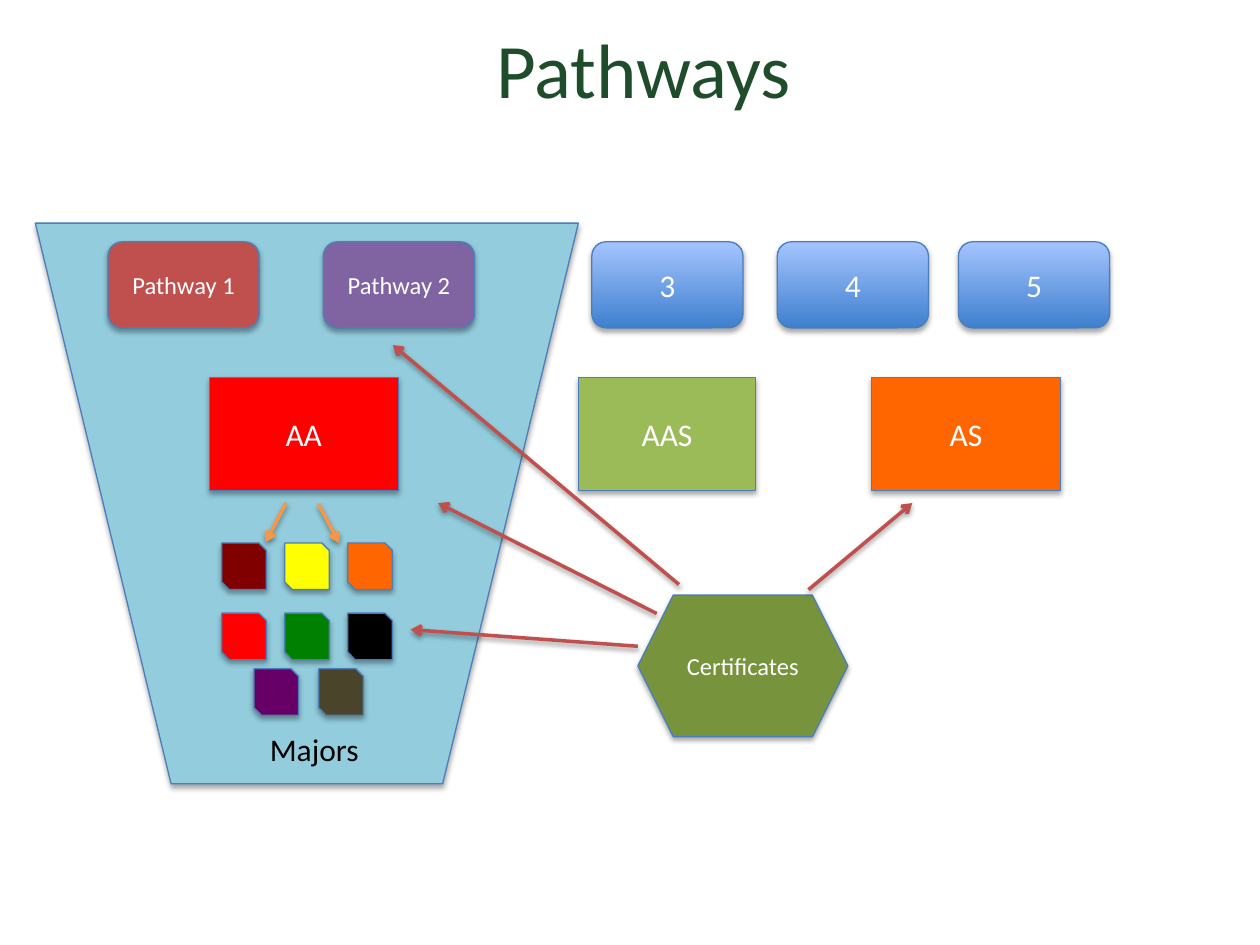
from dataclasses import dataclass

from lxml.etree import SubElement
from pptx import Presentation
from pptx.dml.color import RGBColor
from pptx.enum.shapes import MSO_CONNECTOR, MSO_SHAPE
from pptx.enum.text import MSO_ANCHOR, MSO_AUTO_SIZE, PP_ALIGN
from pptx.oxml.ns import qn
from pptx.util import Pt


@dataclass(frozen=True)
class Theme:
    font: str = "Calibri"
    title_size: float = 44
    label_size: float = 18
    small_size: float = 14
    title: str = "1F4C2B"
    text: str = "FFFFFF"
    dark_text: str = "000000"
    outline: str = "4B7EBC"
    funnel: str = "93CDDD"
    blue_bottom: str = "3F80CE"
    blue_top: str = "A4C4FF"
    pathway_1: str = "C0504D"
    pathway_2: str = "8064A2"
    red: str = "FF0000"
    orange: str = "FF6600"
    green: str = "9BBB59"
    certificate: str = "77933C"
    major_arrow: str = "F79646"
    certificate_arrow: str = "C0504D"


THEME = Theme()


@dataclass(frozen=True)
class Box:
    kind: MSO_SHAPE
    left: float
    top: float
    width: float
    height: float
    fill: str = ""  # empty means the blue gradient
    label: str = ""
    size: float = THEME.label_size
    rotation: float = 0


@dataclass(frozen=True)
class Arrow:
    x1: float
    y1: float
    x2: float
    y2: float
    color: str


def rgb(value: str) -> RGBColor:
    return RGBColor.from_string(value)


def write(tf, text: str, size: float, color: str) -> None:
    tf.text = text
    p = tf.paragraphs[0]
    p.alignment = PP_ALIGN.CENTER
    p.font.name = THEME.font
    p.font.size = Pt(size)
    p.font.color.rgb = rgb(color)


def add_shadow(sp, dist: float, opacity: int) -> None:
    effects = SubElement(sp.element.spPr, qn("a:effectLst"))
    outer = SubElement(effects, qn("a:outerShdw"), blurRad=str(Pt(3.1)),
                       dist=str(Pt(dist)), dir="5400000", rotWithShape="0")
    color = SubElement(outer, qn("a:srgbClr"), val="000000")
    SubElement(color, qn("a:alpha"), val=str(opacity * 1000))


def add_box(shapes, box: Box) -> None:
    sp = shapes.add_shape(box.kind, Pt(box.left), Pt(box.top),
                          Pt(box.width), Pt(box.height))
    sp.rotation = box.rotation
    if box.fill:
        sp.fill.solid()
        sp.fill.fore_color.rgb = rgb(box.fill)
    else:
        sp.fill.gradient()
        sp.fill.gradient_angle = 90
        colors = (THEME.blue_bottom, THEME.blue_top)
        for stop, color in zip(sp.fill.gradient_stops, colors):
            stop.color.rgb = rgb(color)
    sp.line.color.rgb = rgb(THEME.outline)
    sp.line.width = Pt(0.75)
    add_shadow(sp, 1.8, 35)
    if box.label:
        sp.text_frame.vertical_anchor = MSO_ANCHOR.MIDDLE
        write(sp.text_frame, box.label, box.size, THEME.text)


def add_arrow(shapes, arrow: Arrow) -> None:
    line = shapes.add_connector(MSO_CONNECTOR.STRAIGHT, Pt(arrow.x1), Pt(arrow.y1),
                                Pt(arrow.x2), Pt(arrow.y2))
    line.line.color.rgb = rgb(arrow.color)
    line.line.width = Pt(2)
    SubElement(line.element.spPr.find(qn("a:ln")), qn("a:tailEnd"), type="arrow")
    add_shadow(line, 1.6, 38)


FUNNEL = Box(MSO_SHAPE.TRAPEZOID, 20.2, 127.5, 310.3, 320.4, THEME.funnel, rotation=180)

# left, width, fill, label
DEGREES = [
    Box(MSO_SHAPE.RECTANGLE, left, 215.9, width, 64.6, fill, label)
    for left, width, fill, label in (
        (330.4, 101.5, THEME.green, "AAS"),
        (119.6, 108, THEME.red, "AA"),
        (498, 108, THEME.orange, "AS"),
    )
]

# left, fill, label, size
PATHWAYS = [
    Box(MSO_SHAPE.ROUNDED_RECTANGLE, left, 138.2, 86.4, 49.2, fill, label, size)
    for left, fill, label, size in (
        (61.7, THEME.pathway_1, "Pathway 1", THEME.small_size),
        (184.8, THEME.pathway_2, "Pathway 2", THEME.small_size),
        (338.2, "", "3", THEME.label_size),
        (444.2, "", "4", THEME.label_size),
        (547.7, "", "5", THEME.label_size),
    )
]

# left, top, step, fills of one row of majors
MAJORS = [
    Box(MSO_SHAPE.SNIP_2_DIAG_RECTANGLE, left + i * step, top, 25.4, 26.6, fill)
    for left, top, step, fills in (
        (126.8, 310.3, 36, ("800000", "FFFF00", THEME.orange)),
        (126.8, 350.4, 36, (THEME.red, "008000", "000000")),
        (145.2, 382.2, 37, ("660066", "4A452A")),
    )
    for i, fill in enumerate(fills)
]

CERTIFICATES = Box(MSO_SHAPE.HEXAGON, 364.5, 340.1, 120, 80.9, THEME.certificate,
                   "Certificates", THEME.small_size)

ARROWS = [
    Arrow(163.4, 287.5, 151.8, 309.8, THEME.major_arrow),
    Arrow(182, 288, 193.8, 310.3, THEME.major_arrow),
    Arrow(364.5, 369.3, 234.7, 359.8, THEME.certificate_arrow),
    Arrow(462, 337, 521.3, 287.5, THEME.certificate_arrow),
    Arrow(388, 334, 224.5, 197.2, THEME.certificate_arrow),
    Arrow(375.3, 350.6, 250.4, 287.5, THEME.certificate_arrow),
]


def main() -> None:
    prs = Presentation()
    prs.slide_width, prs.slide_height = Pt(720), Pt(540)
    slide = prs.slides.add_slide(prs.slide_layouts[0])
    shapes = slide.shapes

    # Title; the subtitle is not used
    subtitle = slide.placeholders[1].element
    subtitle.getparent().remove(subtitle)
    title = shapes.title
    title.left, title.top, title.width, title.height = Pt(219), Pt(8), Pt(297.5), Pt(61)
    title.text_frame.vertical_anchor = MSO_ANCHOR.MIDDLE
    write(title.text_frame, "Pathways", THEME.title_size, THEME.title)

    # Funnel, pathways, degrees, majors and certificates
    for box in (FUNNEL, *DEGREES, *PATHWAYS, *MAJORS, CERTIFICATES):
        add_box(shapes, box)

    # Caption of the majors
    caption = shapes.add_textbox(Pt(144.7), Pt(413.5), Pt(69.8), Pt(29))
    tf = caption.text_frame
    tf.word_wrap = True
    tf.auto_size = MSO_AUTO_SIZE.SHAPE_TO_FIT_TEXT
    write(tf, "Majors", THEME.label_size, THEME.dark_text)

    for arrow in ARROWS:
        add_arrow(shapes, arrow)

    prs.save("out.pptx")


if __name__ == "__main__":
    main()
